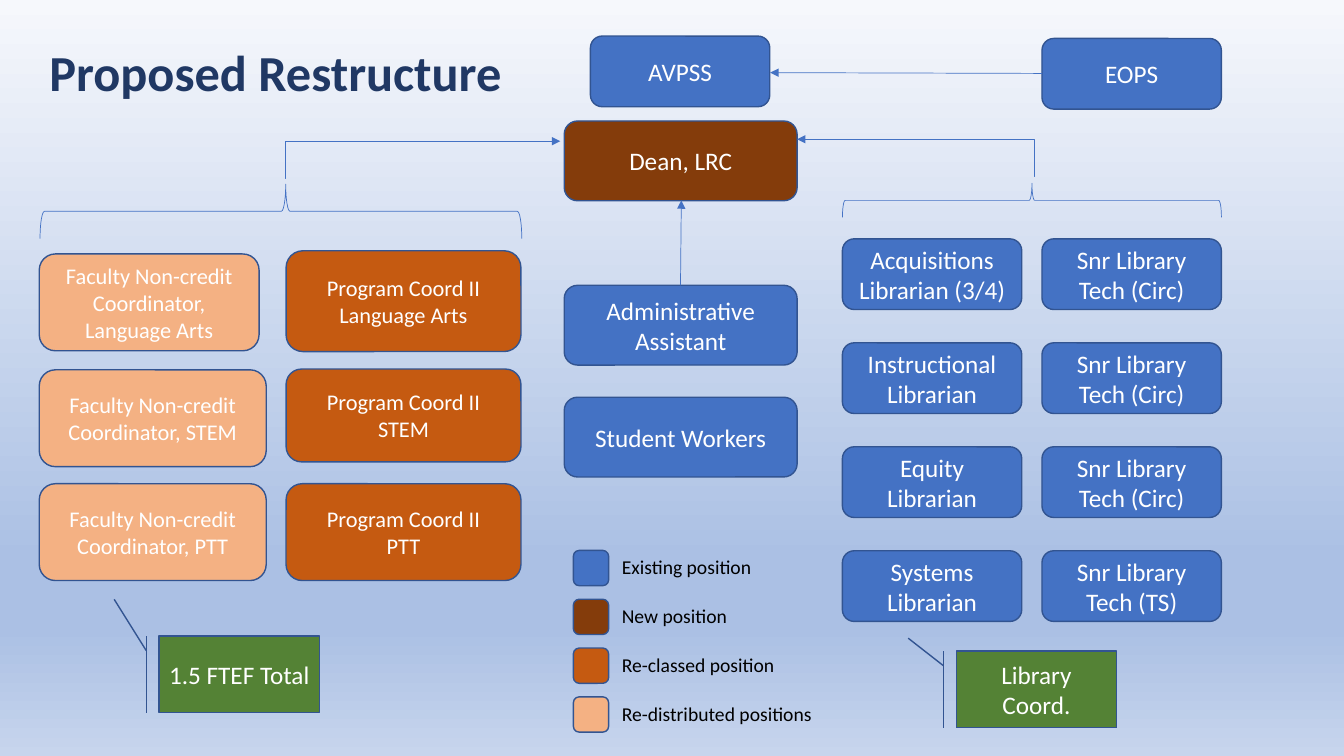
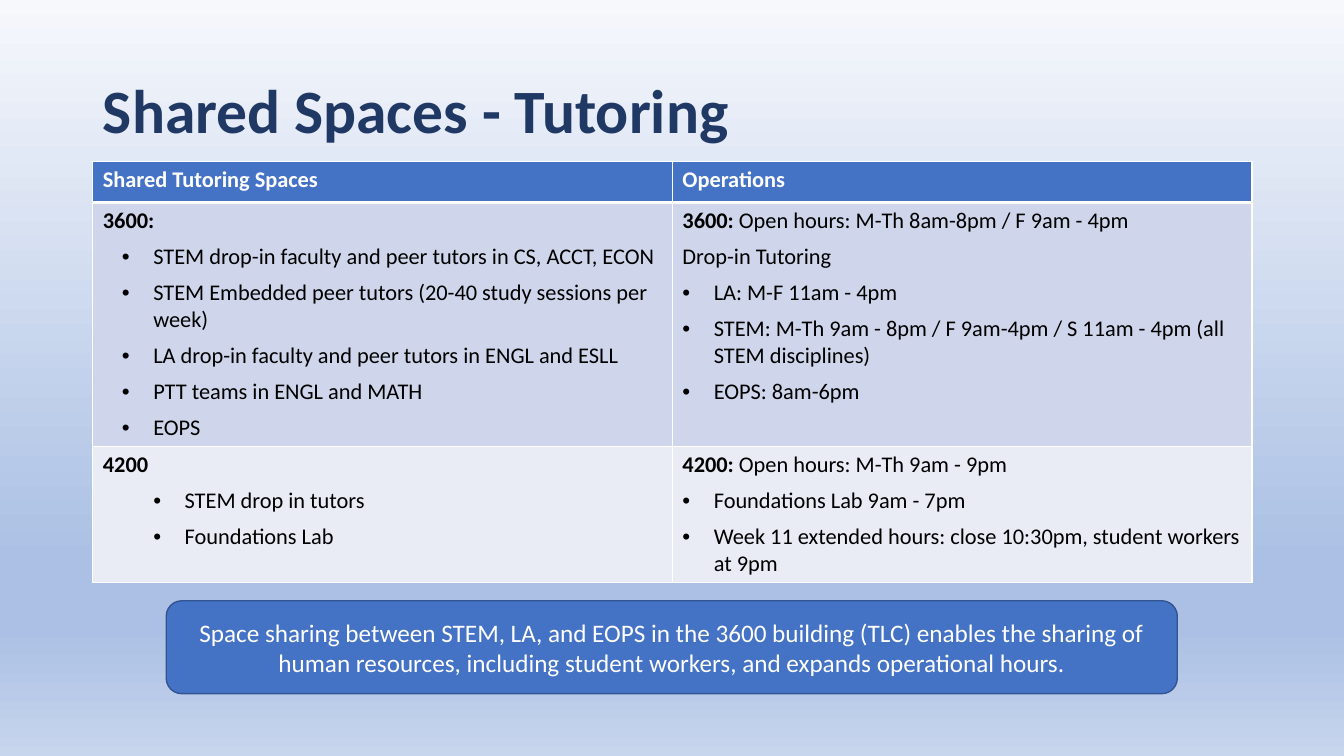
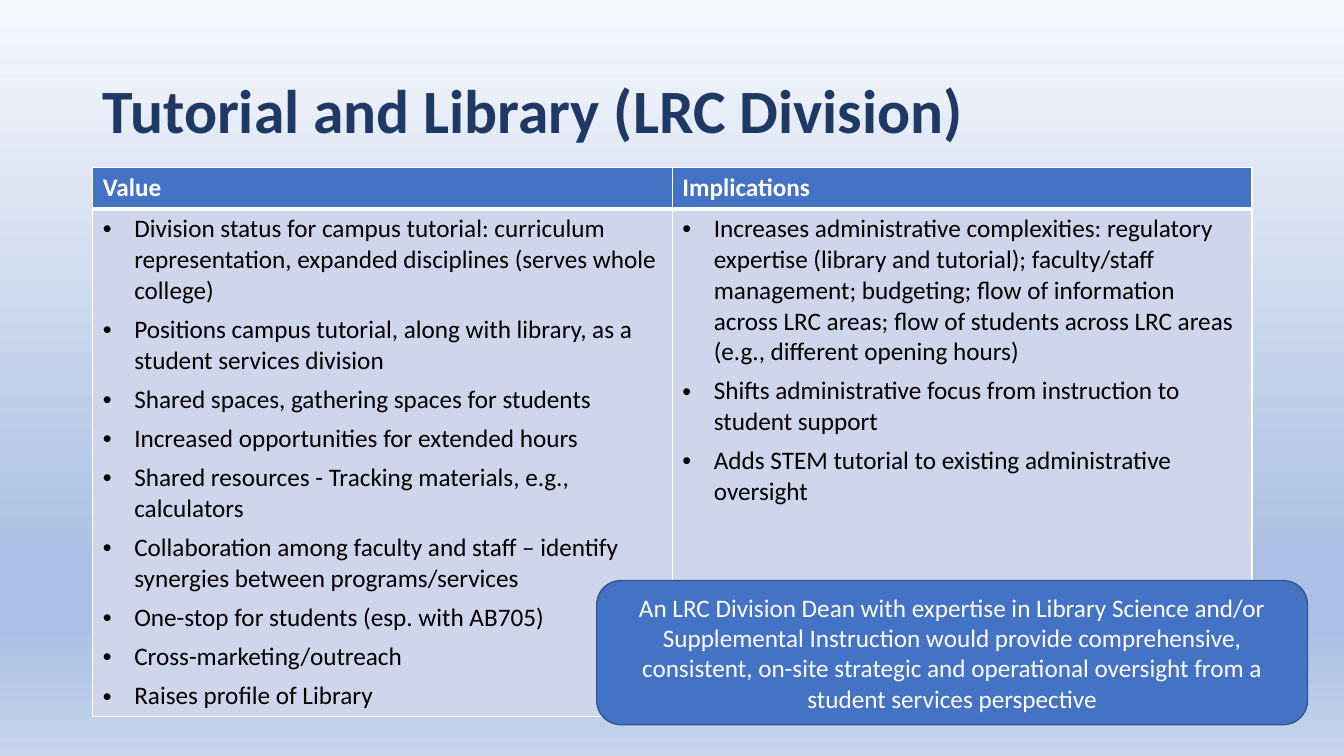
import dataclasses

import lxml.etree
import pptx
import pptx.dml.color
import pptx.enum.shapes
import pptx.enum.text
import pptx.oxml.ns
import pptx.shapes.autoshape
import pptx.slide
import pptx.text.text
import pptx.util

Cm = pptx.util.Cm
Pt = pptx.util.Pt
qn = pptx.oxml.ns.qn
Shape = pptx.enum.shapes.MSO_SHAPE
Connector = pptx.enum.shapes.MSO_CONNECTOR
Align = pptx.enum.text.PP_ALIGN
Anchor = pptx.enum.text.MSO_ANCHOR

# Shared look
FONT = "Calibri"
WHITE, BLACK, NAVY = "FFFFFF", "000000", "203864"
BLUE, OUTLINE, GREEN = "4472C4", "325491", "548235"
BROWN, ORANGE, PEACH = "843C0B", "C55A11", "F4B183"
BAND_COLOURS = ["CFD5EA", "E9EBF5"]
BACKGROUND_STOPS = [(0, "F6F8FC"), (74, "ABC0E4"), (83, "ABC0E4"), (100, "C7D5ED")]
BULLET_HANG = 0.79


@dataclasses.dataclass
class Area:
    """A rectangle in centimetres."""
    left: float
    top: float
    width: float
    height: float

    def lengths(self) -> list[pptx.util.Length]:
        return [Cm(value) for value in dataclasses.astuple(self)]


@dataclasses.dataclass
class Line:
    """A paragraph: an optional bold lead, and a bullet if indent is set."""
    text: str
    lead: str = ""
    indent: float = 0


@dataclasses.dataclass
class Box:
    text: str
    area: Area
    fill: str = BLUE
    size: int = 18
    kind: Shape = Shape.ROUNDED_RECTANGLE
    adjustments: tuple[float, ...] = ()


@dataclasses.dataclass
class Arrow:
    start: tuple[float, float]
    end: tuple[float, float]
    bend: int | None = None


@dataclasses.dataclass
class Brace:
    """A brace pointing up; area is the space it covers once turned."""
    area: Area
    kind: Shape
    rotation: int
    adjustments: tuple[float, float] = (0.08, 0.5)


@dataclasses.dataclass
class Grid:
    area: Area
    size: int
    heading: list[str]
    rows: list[list[list[Line]]]
    heights: list[float]


def colour(code: str) -> pptx.dml.color.RGBColor:
    return pptx.dml.color.RGBColor.from_string(code)


def bullets(*texts: str, indent: float = BULLET_HANG) -> list[Line]:
    return [Line(text, indent=indent) for text in texts]


def add_xml(parent: lxml.etree._Element, tag: str, **attributes: str) -> lxml.etree._Element:
    return lxml.etree.SubElement(parent, qn(tag), attributes)


def write_lines(frame: pptx.text.text.TextFrame, lines: list[Line], size: int, code: str,
                align: Align = Align.LEFT, bold: bool = False, space_before: int = 0) -> None:
    frame.word_wrap = True
    for index, line in enumerate(lines):
        para = frame.paragraphs[0] if index == 0 else frame.add_paragraph()
        if line.lead:
            span = para.add_run()
            span.text = line.lead
            span.font.bold = True
        if line.text:
            para.add_run().text = line.text
        if line.indent:
            properties = para._p.get_or_add_pPr()
            properties.set("marL", str(Cm(line.indent)))
            properties.set("indent", str(-Cm(BULLET_HANG)))
            add_xml(properties, "a:buFont", typeface="Arial")
            add_xml(properties, "a:buChar", char="•")
        para.alignment = align
        para.space_before = Pt(space_before)
        para.font.name = FONT
        para.font.size = Pt(size)
        para.font.bold = bold
        para.font.color.rgb = colour(code)


def set_background(deck: pptx.presentation.Presentation) -> None:
    fill = deck.slide_master.background.fill
    fill.gradient()
    fill.gradient_angle = 270
    stops = next(deck.slide_master.element.iter(qn("a:gsLst")))
    for stop in list(stops):
        stops.remove(stop)
    for percent, code in BACKGROUND_STOPS:
        add_xml(add_xml(stops, "a:gs", pos=str(percent * 1000)), "a:srgbClr", val=code)


def add_page(deck: pptx.presentation.Presentation, title: str,
             area: Area = Area(2.34, 1.02, 29.21, 3.68), size: int = 44) -> pptx.slide.Slide:
    page = deck.slides.add_slide(deck.slide_layouts[5])
    holder = page.shapes.title
    holder.left, holder.top, holder.width, holder.height = area.lengths()
    holder.text_frame.vertical_anchor = Anchor.MIDDLE
    write_lines(holder.text_frame, [Line(title)], size, NAVY, bold=True)
    holder.text_frame.paragraphs[0].line_spacing = 0.9
    return page


def add_box(page: pptx.slide.Slide, box: Box) -> None:
    shape = page.shapes.add_shape(box.kind, *box.area.lengths())
    shape.shadow.inherit = False
    shape.fill.solid()
    shape.fill.fore_color.rgb = colour(box.fill)
    shape.line.color.rgb = colour(OUTLINE)
    shape.line.width = Pt(1)
    for index, value in enumerate(box.adjustments):
        shape.adjustments[index] = value
    if box.text:
        shape.text_frame.vertical_anchor = Anchor.MIDDLE
        lines = [Line(text) for text in box.text.split("\n")]
        write_lines(shape.text_frame, lines, box.size, WHITE, Align.CENTER)


def add_label(page: pptx.slide.Slide, text: str, area: Area) -> None:
    label = page.shapes.add_textbox(*area.lengths())
    write_lines(label.text_frame, [Line(text)], 14, BLACK)


def add_arrow(page: pptx.slide.Slide, arrow: Arrow) -> None:
    kind = Connector.STRAIGHT if arrow.bend is None else Connector.ELBOW
    ends = [Cm(value) for value in arrow.start + arrow.end]
    connector = page.shapes.add_connector(kind, *ends)
    connector.line.color.rgb = colour(BLUE)
    connector.line.width = Pt(0.5)
    properties = connector._element.spPr
    add_xml(properties.find(qn("a:ln")), "a:tailEnd", type="triangle")
    add_xml(properties, "a:effectLst")
    if arrow.bend is not None:
        guides = next(properties.iter(qn("a:avLst")))
        add_xml(guides, "a:gd", name="adj1", fmla=f"val {arrow.bend}")


def add_brace(page: pptx.slide.Slide, brace: Brace) -> None:
    area = brace.area
    shift = (area.width - area.height) / 2
    upright = Area(area.left + shift, area.top - shift, area.height, area.width)
    shape = page.shapes.add_shape(brace.kind, *upright.lengths())
    shape.rotation = brace.rotation
    shape.shadow.inherit = False
    shape.fill.background()
    shape.line.color.rgb = colour(BLUE)
    shape.line.width = Pt(0.5)
    for index, value in enumerate(brace.adjustments):
        shape.adjustments[index] = value


def add_grid(page: pptx.slide.Slide, grid: Grid) -> None:
    contents = [[[Line(text)] for text in grid.heading]] + grid.rows
    frame = page.shapes.add_table(len(contents), len(grid.heading), *grid.area.lengths())
    table = frame.table
    for row_index, cells in enumerate(contents):
        table.rows[row_index].height = Cm(grid.heights[row_index])
        heading = row_index == 0
        for column_index, lines in enumerate(cells):
            cell = table.cell(row_index, column_index)
            write_lines(cell.text_frame, lines, grid.size, WHITE if heading else BLACK,
                        bold=heading, space_before=0 if heading else 6)
            # White rules, thicker under the heading
            widths = {"L": 1, "R": 1, "T": 3 if row_index == 1 else 1, "B": 3 if heading else 1}
            for side, width in widths.items():
                edge = add_xml(cell._tc.get_or_add_tcPr(), f"a:ln{side}", w=str(Pt(width)))
                add_xml(add_xml(edge, "a:solidFill"), "a:srgbClr", val=WHITE)
            cell.fill.solid()
            cell.fill.fore_color.rgb = colour(BLUE if heading else BAND_COLOURS[row_index - 1])


def build_restructure(deck: pptx.presentation.Presentation) -> None:
    page = add_page(deck, "Proposed Restructure", Area(0.99, 0.05, 30.53, 3.68), 36)

    # Leadership and support
    boxes = [
        Box("AVPSS", Area(14.88, 0.91, 4.52, 1.78)),
        Box("EOPS", Area(26.26, 0.97, 4.52, 1.78)),
        Box("Dean, LRC", Area(14.22, 3.05, 5.87, 2.01), BROWN),
        Box("Administrative Assistant", Area(14.22, 7.19, 5.87, 2.01)),
        Box("Student Workers", Area(14.22, 10.01, 5.87, 2.01)),
    ]

    # Tutorial positions
    tutorial = [
        ("Language Arts", Area(0.99, 6.4, 5.54, 2.44), Area(7.21, 6.32, 5.92, 2.54)),
        ("STEM", Area(0.99, 9.32, 5.72, 2.44), Area(7.21, 9.3, 5.92, 2.34)),
        ("PTT", Area(0.99, 12.19, 5.72, 2.44), Area(7.21, 12.19, 5.92, 2.44)),
    ]
    for subject, faculty_area, program_area in tutorial:
        boxes.append(Box(f"Faculty Non-credit Coordinator, {subject}", faculty_area, PEACH, 16))
        boxes.append(Box(f"Program Coord II\n{subject}", program_area, ORANGE, 16))

    # Library positions
    library = [
        ("Acquisitions\nLibrarian (3/4)", "Snr Library Tech (Circ)"),
        ("Instructional\nLibrarian", "Snr Library Tech (Circ)"),
        ("Equity Librarian", "Snr Library Tech (Circ)"),
        ("Systems Librarian", "Snr Library Tech (TS)"),
    ]
    for row, names in enumerate(library):
        for column, name in enumerate(names):
            boxes.append(Box(name, Area(21.23 + 5.03 * column, 6.02 + 2.62 * row, 4.52, 1.78)))

    # Callouts
    callout = Shape.LINE_CALLOUT_1_BORDER_AND_ACCENT_BAR
    boxes += [
        Box("1.5 FTEF Total", Area(4.01, 16.03, 4.04, 1.93), GREEN, 18, callout,
            (0.19, -0.08, -0.48, -0.28)),
        Box("Library Coord.", Area(24.1, 16.41, 4.04, 1.93), GREEN, 18, callout,
            (0.19, -0.08, -0.17, -0.3)),
    ]

    # Legend
    legend = [("Existing position", BLUE), ("New position", BROWN),
              ("Re-classed position", ORANGE), ("Re-distributed positions", PEACH)]
    for row, (meaning, fill) in enumerate(legend):
        top = 13.87 + 1.23 * row
        boxes.append(Box("", Area(14.45, top, 0.89, 0.89), fill))
        add_label(page, meaning, Area(15.42, top, 5.36, 0.86))

    for box in boxes:
        add_box(page, box)

    # Reporting lines
    for brace in [
        Brace(Area(1.01, 4.64, 12.14, 1.37), Shape.RIGHT_BRACE, 270, (0.08, 0.51)),
        Brace(Area(21.23, 4.62, 9.55, 0.86), Shape.LEFT_BRACE, 90),
    ]:
        add_brace(page, brace)
    for arrow in [
        Arrow((7.19, 4.5), (14.12, 3.56), bend=200),
        Arrow((26.09, 4.45), (20.09, 3.51), bend=300),
        Arrow((17.15, 7.19), (17.17, 5.05)),
        Arrow((26.26, 1.85), (19.41, 1.83)),
    ]:
        add_arrow(page, arrow)


def build_shared_spaces(deck: pptx.presentation.Presentation) -> None:
    page = add_page(deck, "Shared Spaces - Tutoring")
    add_grid(page, Grid(
        Area(2.34, 4.06, 29.21, 10.6), 16, ["Shared Tutoring Spaces", "Operations"],
        [
            [
                [Line("", "3600:")] + bullets(
                    "STEM drop-in faculty and peer tutors in CS, ACCT, ECON",
                    "STEM Embedded peer tutors (20-40 study sessions per week)",
                    "LA drop-in faculty and peer tutors in ENGL and ESLL",
                    "PTT teams in ENGL and MATH",
                    "EOPS", indent=1.27),
                [Line("Open hours: M-Th 8am-8pm / F 9am - 4pm", "3600: "),
                 Line("Drop-in Tutoring")] + bullets(
                    "LA: M-F 11am - 4pm",
                    "STEM: M-Th 9am - 8pm / F 9am-4pm / S 11am - 4pm (all STEM disciplines)",
                    "EOPS: 8am-6pm"),
            ],
            [
                [Line("", "4200")] + bullets("STEM drop in tutors", "Foundations Lab", indent=2.06),
                [Line("Open hours: M-Th 9am - 9pm", "4200: ")] + bullets(
                    "Foundations Lab 9am - 7pm",
                    "Week 11 extended hours: close 10:30pm, student workers at 9pm"),
            ],
        ],
        [1.04, 6.1, 3.4]))
    add_box(page, Box(
        "Space sharing between STEM, LA, and EOPS in the 3600 building (TLC) enables the sharing of "
        "human resources, including student workers, and expands operational hours.",
        Area(4.19, 15.14, 25.48, 2.34), kind=Shape.FLOWCHART_ALTERNATE_PROCESS))


def build_division(deck: pptx.presentation.Presentation) -> None:
    page = add_page(deck, "Tutorial and Library (LRC Division)")
    add_grid(page, Grid(
        Area(2.34, 4.22, 29.21, 13.64), 18, ["Value", "Implications"],
        [[
            bullets(
                "Division status for campus tutorial: curriculum representation, "
                "expanded disciplines (serves whole college)",
                "Positions campus tutorial, along with library, as a student services division",
                "Shared spaces, gathering spaces for students",
                "Increased opportunities for extended hours",
                "Shared resources - Tracking materials, e.g., calculators",
                "Collaboration among faculty and staff – identify synergies between "
                "programs/services",
                "One-stop for students (esp. with AB705)",
                "Cross-marketing/outreach",
                "Raises profile of Library"),
            bullets(
                "Increases administrative complexities: regulatory expertise (library and "
                "tutorial); faculty/staff management; budgeting; flow of information across LRC "
                "areas; flow of students across LRC areas (e.g., different opening hours)",
                "Shifts administrative focus from instruction to student support",
                "Adds STEM tutorial to existing administrative oversight"),
        ]],
        [1.04, 12.6]))
    add_box(page, Box(
        "An LRC Division Dean with expertise in Library Science and/or Supplemental Instruction "
        "would provide comprehensive, consistent, on-site strategic and operational oversight "
        "from a student services perspective",
        Area(15.04, 14.63, 17.91, 3.63), kind=Shape.FLOWCHART_ALTERNATE_PROCESS))


def main() -> None:
    deck = pptx.Presentation()
    deck.slide_width, deck.slide_height = Cm(33.87), Cm(19.05)
    set_background(deck)
    build_restructure(deck)
    build_shared_spaces(deck)
    build_division(deck)
    deck.save("out.pptx")


if __name__ == "__main__":
    main()
